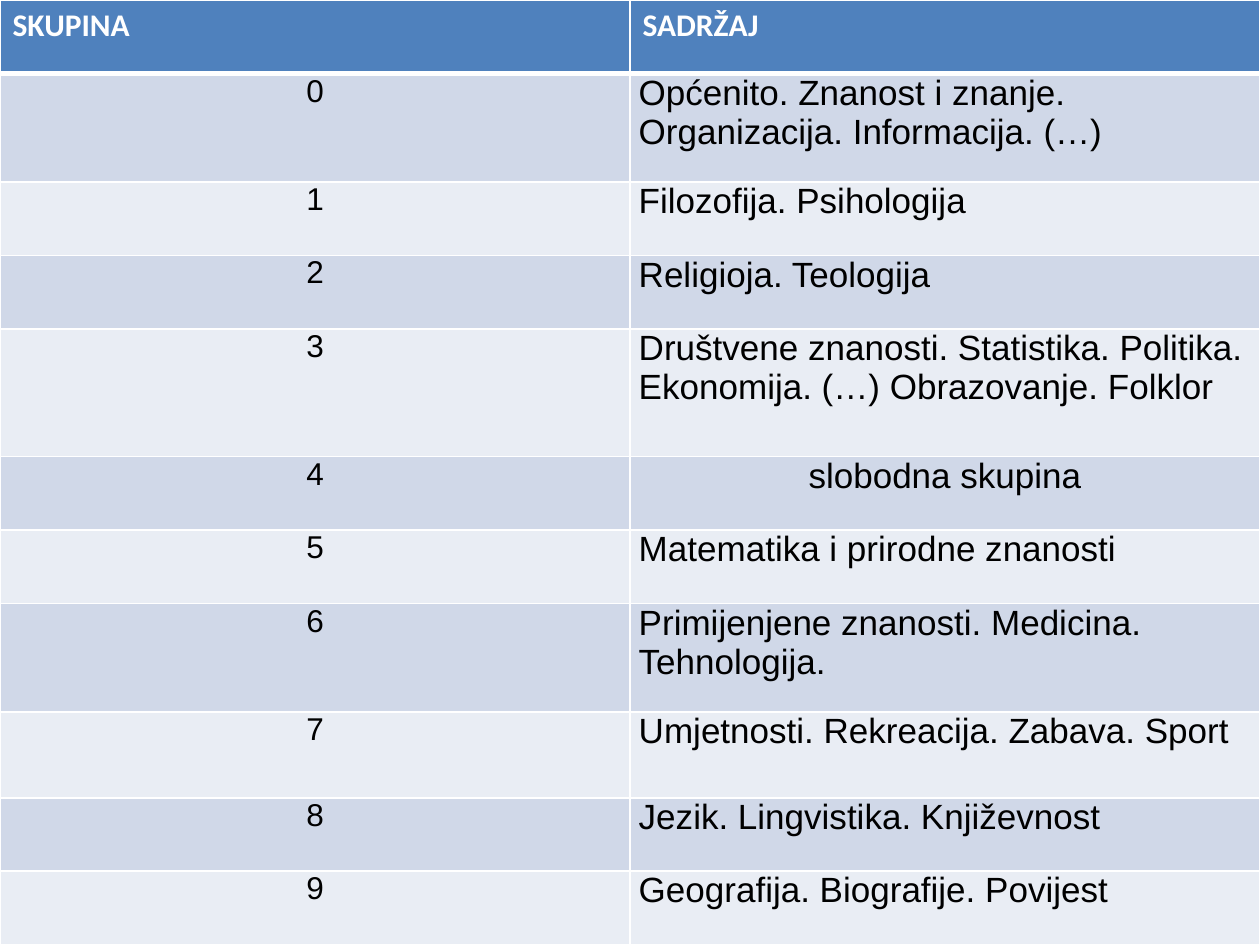
from lxml import etree
from pptx import Presentation
from pptx.dml.color import RGBColor
from pptx.enum.text import PP_ALIGN
from pptx.oxml.ns import qn
from pptx.util import Pt

LEFT, CENTER = PP_ALIGN.LEFT, PP_ALIGN.CENTER

COLORS = {
    "header": "4F81BD",
    "dark band": "D0D8E8",
    "light band": "E9EDF4",
    "line": "FFFFFF",
    "header text": "FFFFFF",
    "text": "000000",
}
WIDTH, HEIGHT = 720, 540

# Each group's content, row height and alignment; the number is its position
GROUPS = [
    ("Općenito. Znanost i znanje. Organizacija. Informacija. (…)", 62, LEFT),
    ("Filozofija. Psihologija", 42, LEFT),
    ("Religioja. Teologija", 42, LEFT),
    ("Društvene znanosti. Statistika. Politika. Ekonomija. (…) "
     "Obrazovanje. Folklor", 73, LEFT),
    ("slobodna skupina", 42, CENTER),
    ("Matematika i prirodne znanosti", 42, LEFT),
    ("Primijenjene znanosti. Medicina. Tehnologija.", 62, LEFT),
    ("Umjetnosti. Rekreacija. Zabava. Sport", 49, LEFT),
    ("Jezik. Lingvistika. Književnost", 42, LEFT),
    ("Geografija. Biografije. Povijest", 42, LEFT),
]
HEADER_HEIGHT = 42
BODY_MARGINS = {
    "margin_left": Pt(5), "margin_right": Pt(5),
    "margin_top": Pt(0), "margin_bottom": Pt(0),
}


def fill_cell(cell, text, align, fill, color, font):
    cell.fill.solid()
    cell.fill.fore_color.rgb = RGBColor.from_string(COLORS[fill])
    para = cell.text_frame.paragraphs[0]
    para.alignment = align
    span = para.add_run()
    span.text = text
    span.font.color.rgb = RGBColor.from_string(COLORS[color])
    for name, value in font.items():
        setattr(span.font, name, value)


def add_borders(cell, widths):
    properties = cell._tc.get_or_add_tcPr()
    for index, (side, width) in enumerate(widths.items()):
        line = etree.Element(qn(f"a:{side}"), w=str(Pt(width)))
        solid = etree.SubElement(line, qn("a:solidFill"))
        etree.SubElement(solid, qn("a:srgbClr"), val=COLORS["line"])
        properties.insert(index, line)


deck = Presentation()
deck.slide_width, deck.slide_height = Pt(WIDTH), Pt(HEIGHT)
page = deck.slides.add_slide(deck.slide_layouts[6])

# Table with two equal columns
table = page.shapes.add_table(
    len(GROUPS) + 1, 2, Pt(0), Pt(0), Pt(WIDTH), Pt(HEIGHT)).table
for column in table.columns:
    column.width = Pt(WIDTH / 2)

# Header row
table.rows[0].height = Pt(HEADER_HEIGHT)
for cell, title in zip(table.rows[0].cells, ("SKUPINA", "SADRŽAJ")):
    fill_cell(cell, title, LEFT, "header", "header text",
              {"name": "Calibri", "size": Pt(18), "bold": True})
    add_borders(cell, {"lnL": 1, "lnR": 1, "lnT": 1, "lnB": 3})

# One banded row per group
for number, (content, height, align) in enumerate(GROUPS):
    row = table.rows[number + 1]
    row.height = Pt(height)
    band = "light band" if number % 2 else "dark band"
    entries = ((str(number), CENTER, 18), (content, align, 20))
    for cell, (text, alignment, size) in zip(row.cells, entries):
        for name, value in BODY_MARGINS.items():
            setattr(cell, name, value)
        fill_cell(cell, text, alignment, band, "text",
                  {"name": "Arial", "size": Pt(size), "bold": False})
        add_borders(cell, {"lnL": 1, "lnR": 1,
                           "lnT": 1 if number else 3, "lnB": 1})

deck.save("out.pptx")
